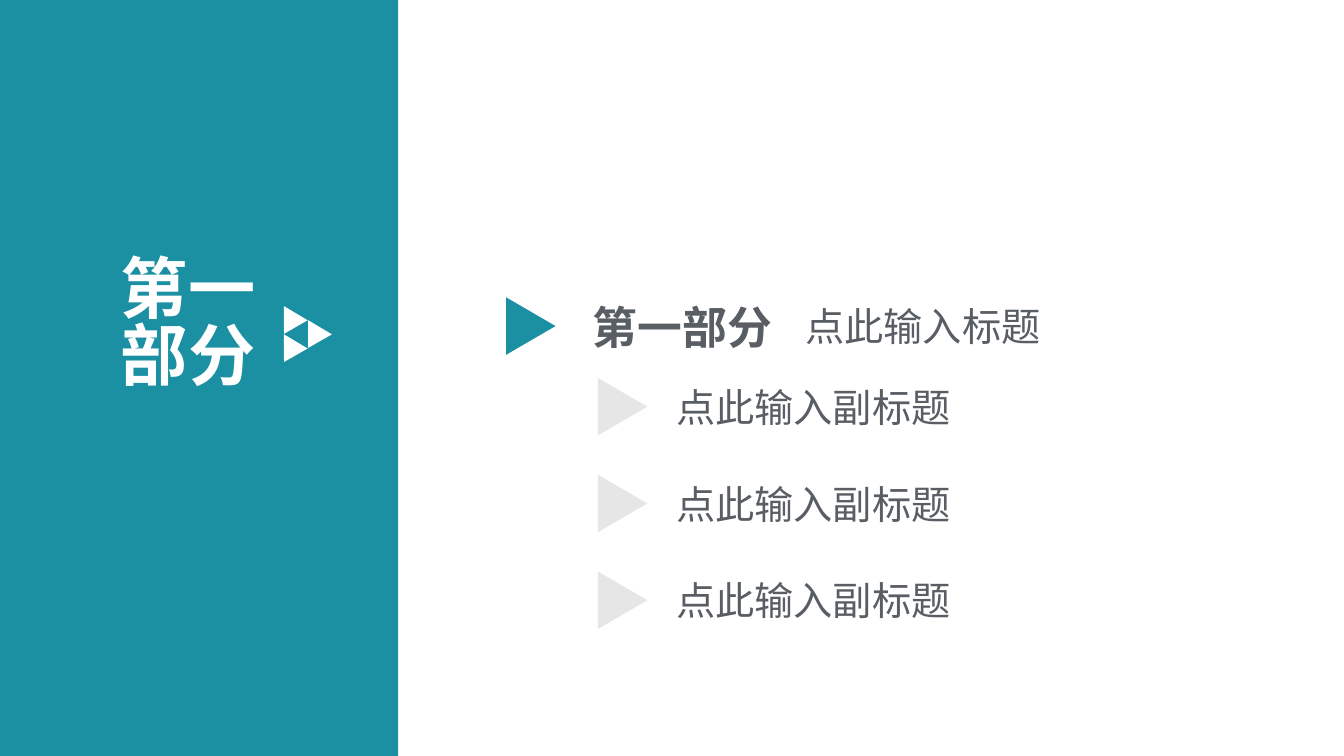
from dataclasses import dataclass
from lxml.etree import SubElement
from pptx import Presentation
from pptx.dml.color import RGBColor
from pptx.enum.shapes import MSO_SHAPE
from pptx.enum.text import MSO_ANCHOR, MSO_AUTO_SIZE, PP_ALIGN
from pptx.oxml.ns import qn
from pptx.util import Inches, Pt


@dataclass(frozen=True)
class Theme:
    teal: str = "1B90A2"
    white: str = "FFFFFF"
    slate: str = "595E64"
    pale: str = "E7E6E6"
    font: str = "Noto Sans CJK SC"
    title: int = 48
    heading: int = 32
    body: int = 28


theme = Theme()


def write_text(box, text, size=theme.body, color=theme.slate, bold=False, spacing=1.0):
    frame = box.text_frame
    frame.word_wrap = True
    frame.auto_size = MSO_AUTO_SIZE.NONE
    frame.vertical_anchor = MSO_ANCHOR.MIDDLE
    para = frame.paragraphs[0]
    para.alignment = PP_ALIGN.LEFT
    para.line_spacing = spacing
    span = para.add_run()
    span.text = text
    span.font.size = Pt(size)
    span.font.bold = bold
    span.font.color.rgb = RGBColor.from_string(color)
    span.font.name = theme.font
    SubElement(span.font._element, qn("a:ea")).set("typeface", theme.font)


def draw_shape(kind, left, top, width, height, color, rotation=0):
    shape = page.shapes.add_shape(
        kind, Inches(left), Inches(top), Inches(width), Inches(height))
    shape.rotation = rotation
    shape.shadow.inherit = False
    shape.fill.solid()
    shape.fill.fore_color.rgb = RGBColor.from_string(color)
    shape.line.fill.background()
    return shape


deck = Presentation()
deck.slide_width, deck.slide_height = Inches(13.33), Inches(7.5)
page = deck.slides.add_slide(deck.slide_layouts[5])

panel = draw_shape(MSO_SHAPE.RECTANGLE, 0, 0, 3.95, 7.5, theme.teal)
title = page.shapes.title
title._element.addprevious(panel._element)
title.left, title.top = Inches(1.1), Inches(2.38)
title.width, title.height = Inches(1.74), Inches(1.72)
write_text(title, "第一部分", size=theme.title, color=theme.white, bold=True, spacing=0.84)

for left, top in [(2.74, 3.02), (2.74, 3.3), (2.98, 3.16)]:
    draw_shape(MSO_SHAPE.ISOSCELES_TRIANGLE, left, top, 0.27, 0.24, theme.white, rotation=330.2)

draw_shape(MSO_SHAPE.ISOSCELES_TRIANGLE, 4.98, 2.99, 0.57, 0.49, theme.teal, rotation=90)
heading = page.shapes.add_textbox(Inches(5.78), Inches(2.92), Inches(2.11), Inches(0.64))
write_text(heading, "第一部分", size=theme.heading, bold=True)
caption = page.shapes.add_textbox(Inches(7.89), Inches(2.95), Inches(4), Inches(0.57))
write_text(caption, "点此输入标题")

for row in range(3):
    top = 3.75 + row * 0.96
    draw_shape(MSO_SHAPE.ISOSCELES_TRIANGLE, 5.89, top + 0.04, 0.57, 0.49, theme.pale, rotation=90)
    subtitle = page.shapes.add_textbox(Inches(6.61), Inches(top), Inches(4), Inches(0.57))
    write_text(subtitle, "点此输入副标题")

deck.save("out.pptx")
